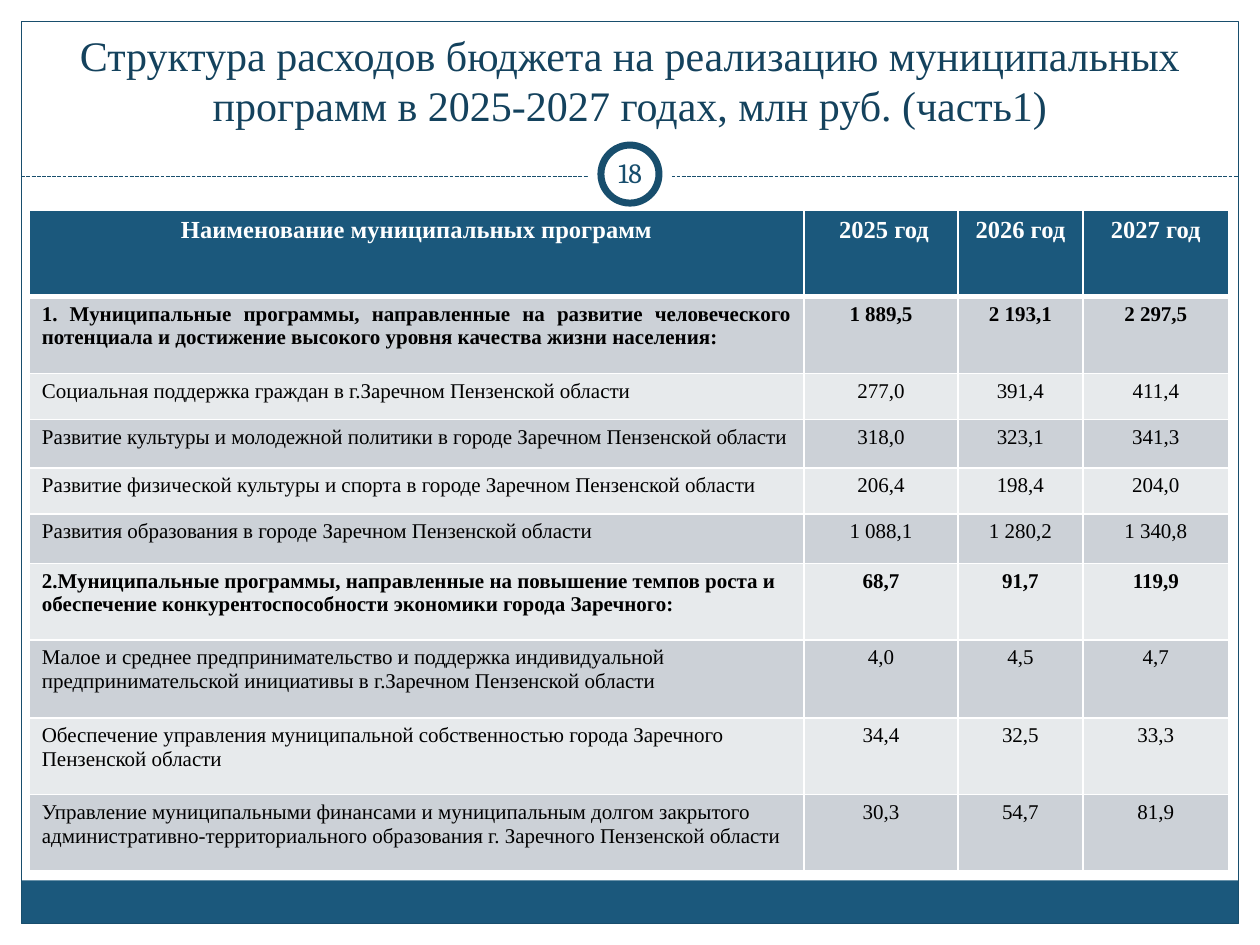
from lxml.etree import SubElement
from pptx import Presentation
from pptx.dml.color import RGBColor
from pptx.enum.dml import MSO_LINE
from pptx.enum.shapes import MSO_CONNECTOR, MSO_SHAPE as SHAPE
from pptx.enum.text import MSO_ANCHOR as ANCHOR, PP_ALIGN as ALIGN
from pptx.oxml import parse_xml
from pptx.oxml.ns import nsdecls, qn
from pptx.util import Cm, Pt

TITLE = ("Структура расходов бюджета на реализацию муниципальных "
         "программ в 2025-2027 годах, млн руб. (часть1)")
PAGE_NUMBER = "18"
HEADER = ("Наименование муниципальных программ", " 2025 год", "2026 год", "2027 год")
# Row height in cm, programme, then the amount for each year
PROGRAMMES = [
    (1.55, "1. Муниципальные программы, направленные на развитие человеческого потенциала "
           "и достижение высокого уровня качества жизни населения:",
     "1 889,5", "2 193,1", "2 297,5"),
    (0.93, "Социальная поддержка граждан в г.Заречном Пензенской области",
     "277,0", "391,4", "411,4"),
    (0.97, "Развитие культуры и молодежной политики в городе Заречном Пензенской области",
     "318,0", "323,1", "341,3"),
    (0.93, "Развитие физической культуры и спорта в городе Заречном Пензенской области",
     "206,4", "198,4", "204,0"),
    (1.0, "Развития образования в городе Заречном Пензенской области",
     "1 088,1", "1 280,2", "1 340,8"),
    (1.54, "2.Муниципальные программы, направленные на повышение темпов роста "
           "и обеспечение конкурентоспособности экономики города Заречного:",
     "68,7", "91,7", "119,9"),
    (1.57, "Малое и среднее предпринимательство и поддержка индивидуальной "
           "предпринимательской инициативы в г.Заречном Пензенской области",
     "4,0", "4,5", "4,7"),
    (1.55, "Обеспечение управления муниципальной собственностью города Заречного "
           "Пензенской области",
     "34,4", "32,5", "33,3"),
    (1.53, "Управление муниципальными финансами и муниципальным долгом закрытого "
           "административно-территориального образования г. Заречного Пензенской области",
     "30,3", "54,7", "81,9"),
]
SECTION_ROWS = (1, 6)
JUSTIFIED_ROW = 1
HEADER_HEIGHT = 1.74
COLUMN_WIDTHS = (15.62, 3.1, 2.52, 2.94)

WHITE, BLACK = "FFFFFF", "000000"
BLUE, DARK_BLUE, TITLE_BLUE = "1B587C", "184E6D", "14425D"
BANDS = ("E7EAEC", "CCD1D7")
SERIF, NUMBER_FONT = "Times New Roman", "Cambria"

WIDTH, HEIGHT, MARGIN = 25.4, 19.05, 0.43
RULE_Y, BADGE_Y = 3.56, 3.51


def rgb(color):
    return RGBColor.from_string(color)


def add_block(slide, kind, box, fill=None, line=None, weight=0.75):
    block = slide.shapes.add_shape(kind, *map(Cm, box))
    block.shadow.inherit = False
    if fill:
        block.fill.solid()
        block.fill.fore_color.rgb = rgb(fill)
    else:
        block.fill.background()
    if line:
        block.line.color.rgb = rgb(line)
        block.line.width = Pt(weight)
    else:
        block.line.fill.background()


def add_disc(slide, diameter, **style):
    """Add a circle centred on the page-number badge."""
    box = ((WIDTH - diameter) / 2, BADGE_Y - diameter / 2, diameter, diameter)
    add_block(slide, SHAPE.OVAL, box, WHITE, **style)


def write(frame, text, size, color, font=SERIF, bold=False, align=ALIGN.CENTER):
    paragraph = frame.paragraphs[0]
    paragraph.alignment = align
    run = paragraph.add_run()
    run.text = text
    run.font.name, run.font.size, run.font.bold = font, Pt(size), bold
    run.font.color.rgb = rgb(color)


def add_label(slide, box, anchor, text, size, color, font, inset):
    frame = slide.shapes.add_textbox(*map(Cm, box)).text_frame
    frame.word_wrap = True
    frame.vertical_anchor = anchor
    frame.margin_left = frame.margin_right = Cm(inset)
    write(frame, text, size, color, font)


def set_borders(cell, top, bottom):
    """Give the cell white borders; they must stand before the fill."""
    weights = {"lnL": 1, "lnR": 1, "lnT": top, "lnB": bottom}
    for place, (tag, weight) in enumerate(weights.items()):
        border = parse_xml(
            f'<a:{tag} {nsdecls("a")} w="{Pt(weight)}"><a:solidFill>'
            f'<a:srgbClr val="{WHITE}"/></a:solidFill></a:{tag}>')
        cell._tc.get_or_add_tcPr().insert(place, border)


def add_frame(slide):
    inner = WIDTH - 2 * MARGIN
    add_block(slide, SHAPE.RECTANGLE, (MARGIN, 17.75, inner, 0.87), BLUE)
    add_block(slide, SHAPE.RECTANGLE, (MARGIN, MARGIN, inner, HEIGHT - 2 * MARGIN),
              line=DARK_BLUE)
    rule = slide.shapes.add_connector(
        MSO_CONNECTOR.STRAIGHT, Cm(MARGIN), Cm(RULE_Y), Cm(WIDTH - MARGIN), Cm(RULE_Y))
    rule.line.color.rgb = rgb(DARK_BLUE)
    rule.line.width = Pt(0.75)
    rule.line.dash_style = MSO_LINE.SQUARE_DOT
    SubElement(rule._element.spPr, qn("a:effectLst"))
    add_disc(slide, 1.7)
    add_disc(slide, 1.17, line=DARK_BLUE, weight=4)


def add_budget_table(slide):
    heights = [HEADER_HEIGHT] + [row[0] for row in PROGRAMMES]
    texts = [HEADER] + [row[1:] for row in PROGRAMMES]
    table = slide.shapes.add_table(
        len(texts), len(HEADER), Cm(0.59), Cm(4.24),
        Cm(sum(COLUMN_WIDTHS)), Cm(sum(heights))).table
    for column, width in zip(table.columns, COLUMN_WIDTHS):
        column.width = Cm(width)
    for r, (height, row_texts) in enumerate(zip(heights, texts)):
        table.rows[r].height = Cm(height)
        header = r == 0
        for c, text in enumerate(row_texts):
            cell = table.cell(r, c)
            cell.fill.solid()
            cell.fill.fore_color.rgb = rgb(BLUE if header else BANDS[r % 2])
            set_borders(cell, top=3 if r == 1 else 1, bottom=3 if header else 1)
            if header or c:
                align = ALIGN.CENTER
            else:
                align = ALIGN.JUSTIFY if r == JUSTIFIED_ROW else ALIGN.LEFT
            write(cell.text_frame, text, 14 if header else 12, WHITE if header else BLACK,
                  bold=header or r in SECTION_ROWS, align=align)


def main():
    deck = Presentation()
    deck.slide_width, deck.slide_height = Cm(WIDTH), Cm(HEIGHT)
    slide = deck.slides.add_slide(deck.slide_layouts[6])
    add_frame(slide)
    add_label(slide, (0.85, 0.64, 23.7, 2.11), ANCHOR.BOTTOM, TITLE, 24, TITLE_BLUE, SERIF, 0.25)
    add_label(slide, (12.07, 2.87, 1.27, 1.22), ANCHOR.MIDDLE, PAGE_NUMBER, 16, DARK_BLUE,
              NUMBER_FONT, 0.13)
    add_budget_table(slide)
    deck.save("out.pptx")


if __name__ == "__main__":
    main()
